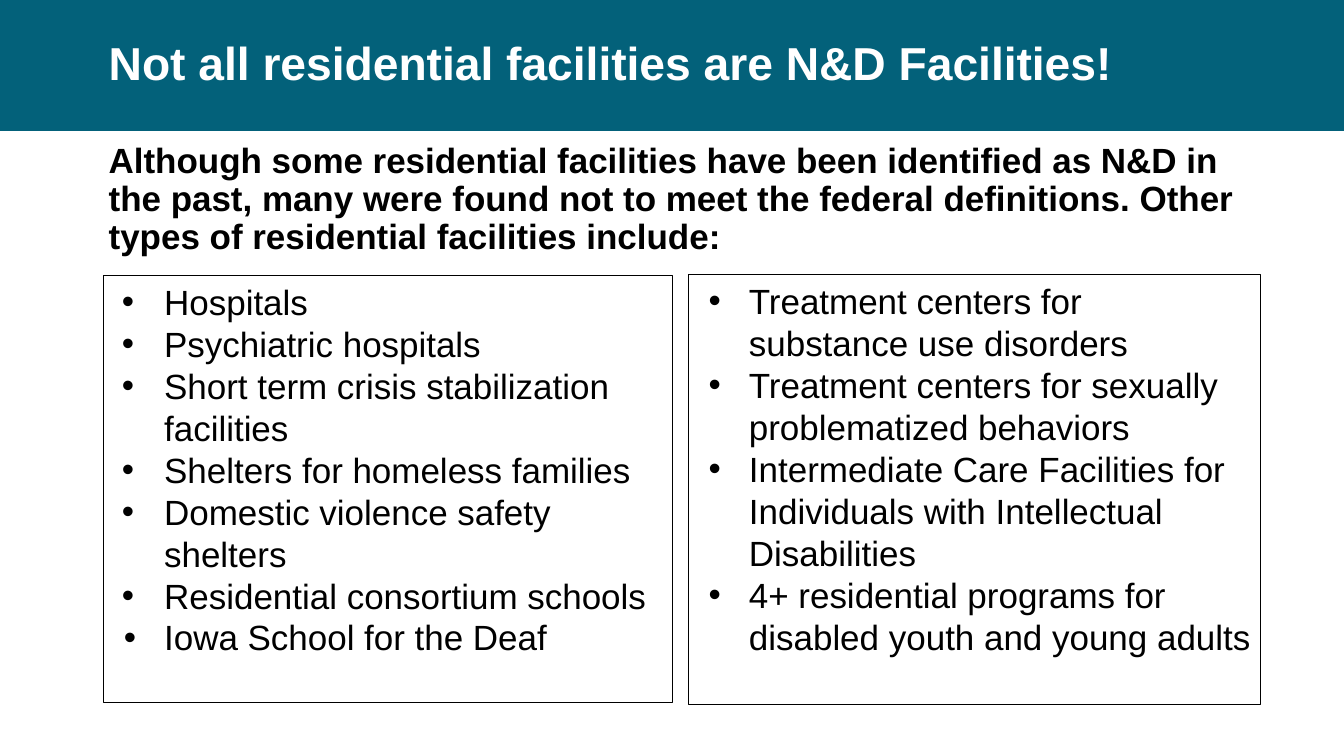
"""Build the slide on residential facilities that are not N&D facilities."""
from lxml.etree import SubElement
from pptx import Presentation
from pptx.dml.color import RGBColor
from pptx.enum.shapes import MSO_SHAPE
from pptx.enum.text import MSO_ANCHOR, PP_ALIGN
from pptx.oxml.ns import qn
from pptx.util import Inches, Pt

TITLE = "Not all residential facilities are N&D Facilities!"
INTRO = (
    "Although some residential facilities have been identified as N&D in the past, "
    "many were found not to meet the federal definitions. "
    "Other types of residential facilities include:"
)
FACILITY_LISTS = [
    {
        "box": (1.03, 2.73, 5.64, 4.24),
        "items": [
            ("Hospitals", 0.42),
            ("Psychiatric hospitals", 0.42),
            ("Short term crisis stabilization facilities", 0.42),
            ("Shelters for homeless families", 0.42),
            ("Domestic violence safety shelters", 0.42),
            ("Residential consortium schools", 0.42),
            ("Iowa School for the Deaf", 0.4),
        ],
    },
    {
        "box": (6.83, 2.72, 5.67, 4.27),
        "items": [
            ("Treatment centers for substance use disorders", 0.4),
            ("Treatment centers for sexually problematized behaviors", 0.4),
            ("Intermediate Care Facilities for Individuals with Intellectual Disabilities", 0.4),
            ("4+ residential programs for disabled youth and young adults", 0.4),
        ],
    },
]
COLORS = {"band": "03617A", "title": "FFFFFF", "ink": "000000"}
FONT = "Arial"
WIDTH, HEIGHT = 13.33, 7.5
BAND_HEIGHT = 1.3
TEXT_LEFT, TEXT_WIDTH = 0.98, 11.5
TITLE_SIZE, BODY_SIZE = 33, 25
SPACE_BEFORE = 7.5
LIST_INDENT = 0.5


def color(name):
    return RGBColor.from_string(COLORS[name])


def add_rect(slide, box):
    rect = slide.shapes.add_shape(MSO_SHAPE.RECTANGLE, *map(Inches, box))
    rect.shadow.inherit = False
    return rect


def add_words(paragraph, words, size, color_name, bold=False):
    run = paragraph.add_run()
    run.text = words
    run.font.name = FONT
    run.font.size = Pt(size)
    run.font.bold = bold
    run.font.color.rgb = color(color_name)


def add_heading(slide, box, words, size, color_name, anchor, space_before=0):
    frame = slide.shapes.add_textbox(*map(Inches, box)).text_frame
    frame.word_wrap = True
    frame.vertical_anchor = anchor
    paragraph = frame.paragraphs[0]
    paragraph.line_spacing = 0.9
    paragraph.space_before = Pt(space_before)
    add_words(paragraph, words, size, color_name, bold=True)


def add_bullet(paragraph, hang):
    props = paragraph._p.get_or_add_pPr()
    props.set("marL", str(Inches(LIST_INDENT)))
    props.set("indent", str(-Inches(hang)))
    bullet_color = SubElement(props, qn("a:buClr"))
    SubElement(bullet_color, qn("a:srgbClr")).set("val", COLORS["ink"])
    SubElement(props, qn("a:buFont")).set("typeface", FONT)
    SubElement(props, qn("a:buChar")).set("char", "•")


def add_facility_list(slide, box, items):
    panel = add_rect(slide, box)
    panel.fill.background()
    panel.line.color.rgb = color("ink")
    panel.line.width = Pt(0.75)
    frame = panel.text_frame
    frame.word_wrap = True
    frame.vertical_anchor = MSO_ANCHOR.TOP
    for index, (facility, hang) in enumerate(items):
        paragraph = frame.add_paragraph() if index else frame.paragraphs[0]
        paragraph.alignment = PP_ALIGN.LEFT
        paragraph.space_before = Pt(0 if index else SPACE_BEFORE)
        add_bullet(paragraph, hang)
        add_words(paragraph, facility, BODY_SIZE, "ink")


def main():
    deck = Presentation()
    deck.slide_width, deck.slide_height = Inches(WIDTH), Inches(HEIGHT)
    slide = deck.slides.add_slide(deck.slide_layouts[6])

    band = add_rect(slide, (0, 0, WIDTH, BAND_HEIGHT))
    band.fill.solid()
    band.fill.fore_color.rgb = color("band")
    band.line.fill.background()

    add_heading(slide, (TEXT_LEFT, 0, TEXT_WIDTH, BAND_HEIGHT),
                TITLE, TITLE_SIZE, "title", MSO_ANCHOR.MIDDLE)
    add_heading(slide, (TEXT_LEFT, 1.44, TEXT_WIDTH, 1.16),
                INTRO, BODY_SIZE, "ink", MSO_ANCHOR.BOTTOM, SPACE_BEFORE)
    for facility_list in FACILITY_LISTS:
        add_facility_list(slide, **facility_list)

    deck.save("out.pptx")


if __name__ == "__main__":
    main()
